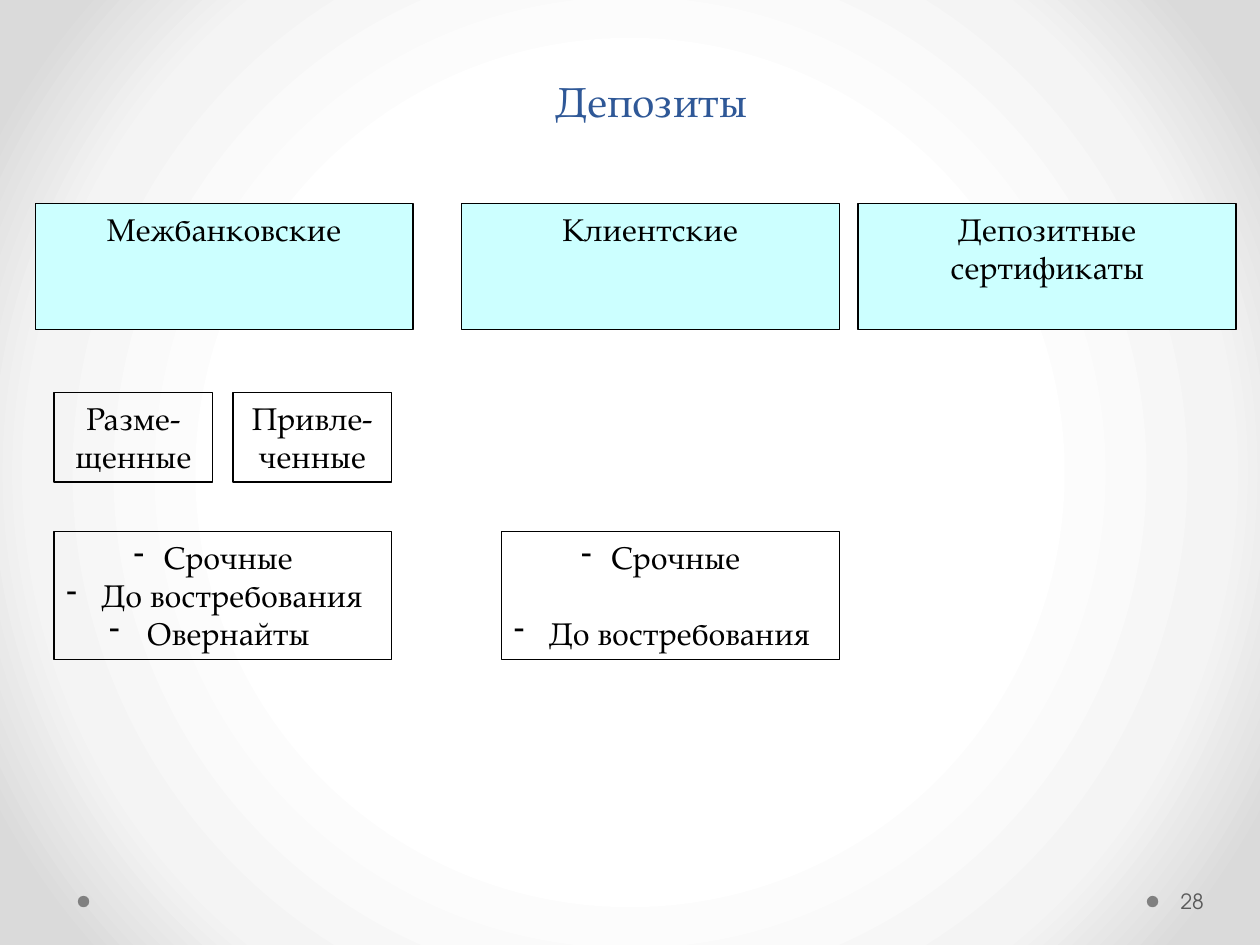
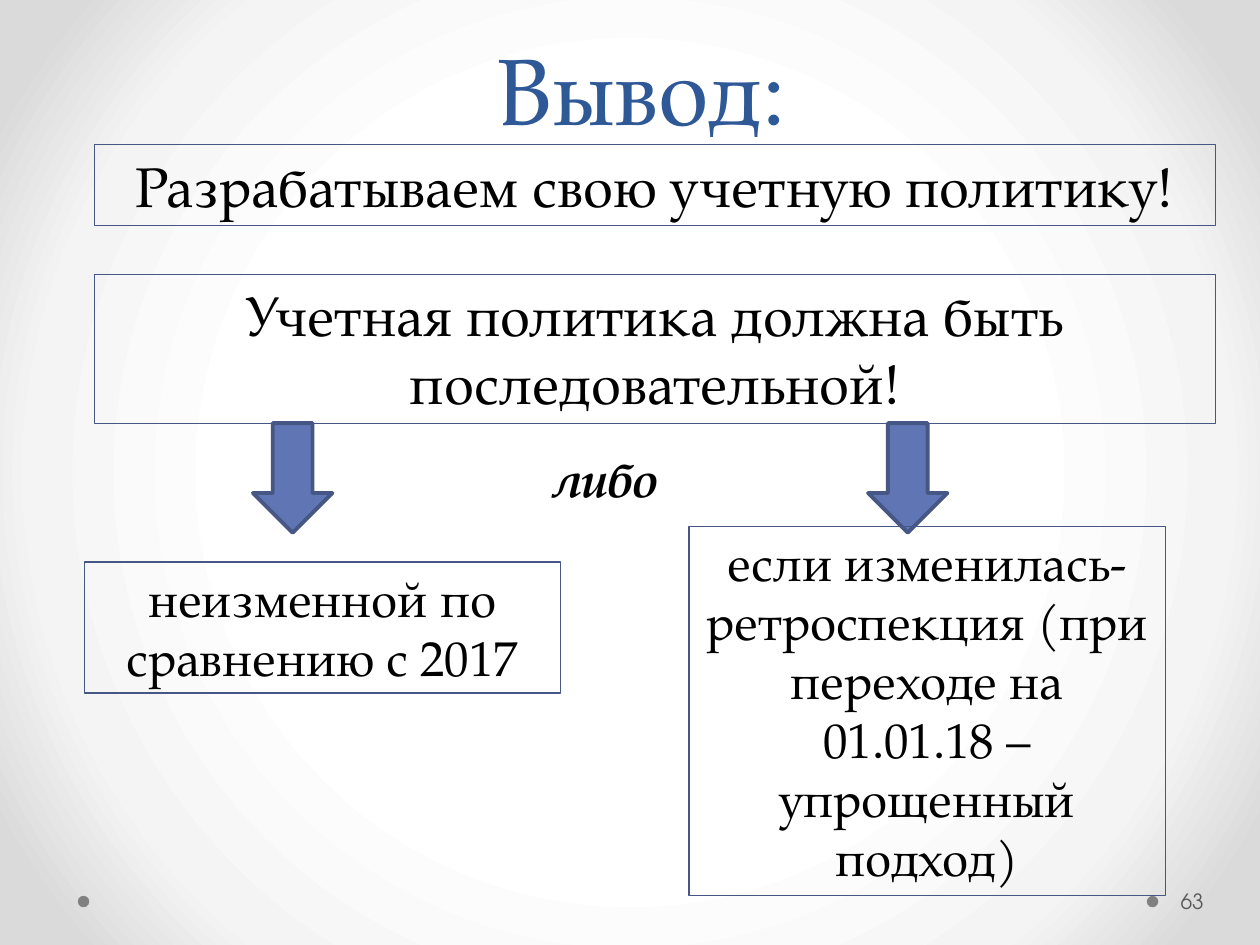
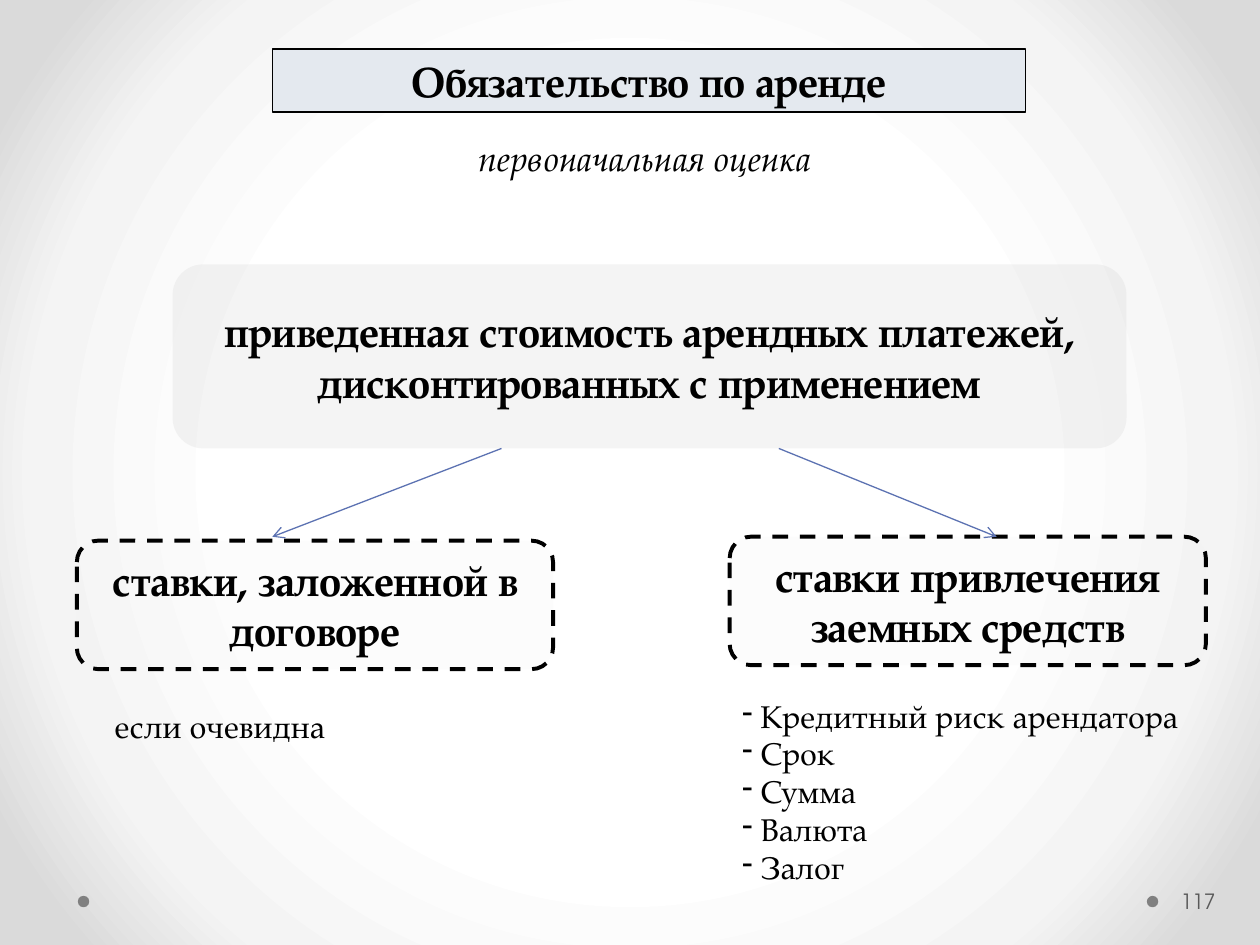
import collections
import dataclasses

import lxml.etree
import pptx
import pptx.dml.color
import pptx.enum.dml
import pptx.enum.shapes
import pptx.enum.text
import pptx.oxml
import pptx.oxml.ns
import pptx.util

Cm, Pt, qn = pptx.util.Cm, pptx.util.Pt, pptx.oxml.ns.qn
SHAPE = pptx.enum.shapes.MSO_SHAPE
ANCHOR = pptx.enum.text.MSO_ANCHOR
ALIGN = pptx.enum.text.PP_ALIGN
DASH = pptx.enum.dml.MSO_LINE.DASH


@dataclasses.dataclass(frozen=True)
class Theme:
    """Colours, fonts and type sizes of the deck."""
    serif: str = "TeX Gyre Pagella"
    sans: str = "TeX Gyre Adventor"
    ink: str = "000000"
    title: str = "2F5897"
    dot: str = "808080"
    number: str = "595959"
    card: str = "CCFFFF"
    heading: str = "E4E9EF"
    base: str = "BFBFBF"
    rate: str = "F2F2F2"
    arrow: str = "6076B4"
    outline: str = "475785"
    link: str = "5C72B2"
    glow: tuple = ((50, "FFFFFF"), (76, "F4F4F4"), (92, "DADADA"))
    tiny: float = 12
    body: float = 18
    sub: float = 20
    head: float = 24
    large: float = 28
    banner: float = 32
    display: float = 54
    hairline: float = 0.75
    heavy: float = 2.25


T = Theme()


class Box(collections.namedtuple("Box", "x y w h")):
    """A rectangle in centimetres."""

    def at(self, dx, dy, w, h):
        """Return a box offset from this one's corner."""
        return Box(self.x + dx, self.y + dy, w, h)


def rgb(value):
    """Turn a hex string into a colour."""
    return pptx.dml.color.RGBColor.from_string(value)


def apply(obj, values):
    """Set each attribute named in a dict of format values."""
    for name, value in values.items():
        setattr(obj, name, value)


def write(sp, lines, size=T.body, color=T.ink, font=T.serif, bold=False, italic=False,
          bullet=False, align=ALIGN.CENTER, anchor=ANCHOR.TOP, para=None, frame=None):
    """Fill a shape with paragraphs in one style."""
    tf = sp.text_frame
    apply(tf, {"word_wrap": True, "vertical_anchor": anchor, **(frame or {})})
    for i, line in enumerate(lines):
        p = tf.add_paragraph() if i else tf.paragraphs[0]
        apply(p, {"alignment": align, **(para or {})})
        if bullet:
            pPr = p._p.get_or_add_pPr()
            lxml.etree.SubElement(pPr, qn("a:buFontTx"))
            lxml.etree.SubElement(pPr, qn("a:buChar")).set("char", "-")
        r = p.add_run()
        r.text = line
        apply(r.font, {"size": Pt(size), "name": font, "bold": bold, "italic": italic})
        r.font.color.rgb = rgb(color)
    return tf


def label(s, box, *lines, **style):
    """Add a text box."""
    return write(s.shapes.add_textbox(*map(Cm, box)), lines, **style)


def panel(s, box, *lines, kind=SHAPE.RECTANGLE, fill=None, alpha=None, line=None,
          width=T.hairline, dash=None, **style):
    """Add a preset shape with optional fill, outline and text."""
    sp = s.shapes.add_shape(kind, *map(Cm, box))
    sp.shadow.inherit = False
    if fill:
        sp.fill.solid()
        sp.fill.fore_color.rgb = rgb(fill)
    else:
        sp.fill.background()
    if alpha:
        clr = sp.element.spPr.find(qn("a:solidFill"))[0]
        lxml.etree.SubElement(clr, qn("a:alpha")).set("val", str(alpha * 1000))
    if line:
        sp.line.color.rgb = rgb(line)
        apply(sp.line, {"width": Pt(width), "dash_style": dash})
    else:
        sp.line.fill.background()
    return write(sp, lines, **style)


def link(s, start, end):
    """Add a thin line with an open arrowhead."""
    kind = pptx.enum.shapes.MSO_CONNECTOR.STRAIGHT
    cx = s.shapes.add_connector(kind, *map(Cm, (*start, *end)))
    cx.line.color.rgb = rgb(T.link)
    cx.line.width = Pt(T.hairline)
    spPr = cx.element.spPr
    lxml.etree.SubElement(spPr.find(qn("a:ln")), qn("a:tailEnd")).set("type", "arrow")
    lxml.etree.SubElement(spPr, qn("a:effectLst"))


def backdrop(prs):
    """Give the master a radial glow."""
    master = prs.slide_master
    master.background.fill.solid()
    stops = "".join(f'<a:gs pos="{pos * 1000}"><a:srgbClr val="{c}"/></a:gs>' for pos, c in T.glow)
    grad = pptx.oxml.parse_xml(
        f'<a:gradFill {pptx.oxml.ns.nsdecls("a")} rotWithShape="1"><a:gsLst>{stops}</a:gsLst>'
        '<a:path path="circle"><a:fillToRect l="50000" t="50000" r="50000" b="50000"/></a:path>'
        '</a:gradFill>')
    bgPr = next(master.element.iter(qn("p:bgPr")))
    bgPr.replace(bgPr[0], grad)


def title(s, box, text, size):
    """Add the slide title."""
    label(s, box, text, size=size, color=T.title, anchor=ANCHOR.BOTTOM,
          para={"line_spacing": Pt(58)})


def footer(s, box, number):
    """Add the two dots and the page number."""
    for dx in (0, box.w - 2.15):
        panel(s, box.at(dx, 0.41, 0.23, 0.23), kind=SHAPE.OVAL, fill=T.dot)
    label(s, box.at(box.w - 1.55, 0, 1.55, box.h), number, size=T.tiny, color=T.number,
          font=T.sans, align=ALIGN.LEFT, anchor=ANCHOR.MIDDLE,
          frame={"margin_left": Cm(0.08), "margin_right": Cm(0.13)})


def deposits(s, box):
    """Add the deposit kinds and their subdivisions."""
    for dx, text in ((0, "Межбанковские"), (8.59, "Клиентские"),
                     (16.59, "Депозитные сертификаты")):
        panel(s, box.at(dx, 0, 7.62, 2.54), text, fill=T.card, line=T.ink)
    for dx, text in ((0.38, "Разме-щенные"), (3.99, "Привле-ченные")):
        panel(s, box.at(dx, 3.81, 3.2, 1.8), text, line=T.ink)
    terms = ("Срочные", " До востребования", " Овернайты ")
    for dx, count in ((0.38, 3), (9.4, 2)):
        tf = panel(s, box.at(dx, 6.61, 6.81, 2.57), *terms[:count], line=T.ink, bullet=True)
    tf.paragraphs[-1].space_before = Pt(21.6)


def conclusion(s, box):
    """Add the policy statements and the two outcomes."""
    for dy, h, text in ((0, 1.63, "Разрабатываем свою учетную политику!"),
                        (2.62, 3, "Учетная политика должна быть последовательной!")):
        panel(s, box.at(0, dy, box.w, h), text, size=T.banner, line=T.outline)
    for dx in (3.2, 15.6):
        panel(s, box.at(dx, 5.61, 1.6, 2.21), kind=SHAPE.DOWN_ARROW, fill=T.arrow,
              line=T.outline, width=T.heavy)
    label(s, box.at(9, 6, 4.19, 1.45), "либо", size=T.large, bold=True, italic=True,
          align=ALIGN.LEFT)
    for dx, dy, h, text in (
            (-0.2, 8.41, 2.64, "неизменной по сравнению с 2017"),
            (11.99, 7.7, 7.44, "если изменилась-ретроспекция (при переходе на 01.01.18 – "
                               "упрощенный подход)")):
        panel(s, box.at(dx, dy, 9.6, h), text, size=T.large, line=T.outline)


def lease(s, box):
    """Add the lease liability measure and its two rates."""
    strong = {"size": T.head, "bold": True}
    rounded = {"kind": SHAPE.ROUNDED_RECTANGLE, "alpha": 17, "anchor": ANCHOR.MIDDLE, **strong}
    panel(s, box.at(3.94, 0, 15.19, 1.27), "Обязательство по аренде",
          fill=T.heading, line=T.ink, **strong)
    label(s, box.at(6.55, 1.63, 9.8, 1.12), "первоначальная оценка", size=T.sub, italic=True)
    panel(s, box.at(1.93, 4.34, 19.23, 3.71),
          "приведенная стоимость арендных платежей, дисконтированных с применением",
          fill=T.base, **rounded)
    for dx, dy, text, start, end in (
            (0, 9.91, "ставки, заложенной в договоре", 8.56, 3.94),
            (13.16, 9.83, "ставки привлечения заемных средств", 14.15, 18.54)):
        panel(s, box.at(dx, dy, 9.6, 2.59), text, fill=T.rate, line=T.ink, width=T.heavy,
              dash=DASH, **rounded)
        link(s, (box.x + start, box.y + 8.05), (box.x + end, box.y + 9.83))
    label(s, box.at(13.16, 12.93, 9.8, 4.11), " Кредитный риск арендатора", " Срок",
          " Сумма", " Валюта", " Залог", bullet=True, align=ALIGN.LEFT)
    label(s, box.at(0.35, 13.13, 9.8, 1.02), " если очевидна", align=ALIGN.LEFT)


def main():
    """Build and save the deck."""
    prs = pptx.Presentation()
    apply(prs, {"slide_width": Cm(25.4), "slide_height": Cm(19.05)})
    backdrop(prs)
    pages = (
        ("28", (Box(1.7, 0.74, 22.86, 1.93), "Депозиты", T.head),
         deposits, Box(0.71, 4.11, 24.2, 9.2)),
        ("63", (Box(1.5, 0.53, 22.86, 2.51), "Вывод:", T.display),
         conclusion, Box(1.9, 2.92, 22.6, 15.14)),
        ("117", None, lease, Box(1.55, 0.99, 22.96, 17.04)),
    )
    for number, heading, region, box in pages:
        s = prs.slides.add_slide(prs.slide_layouts[6])
        footer(s, Box(1.57, 17.65, 23.7, 1.02), number)
        if heading:
            title(s, *heading)
        region(s, box)
    prs.save("out.pptx")


if __name__ == "__main__":
    main()
